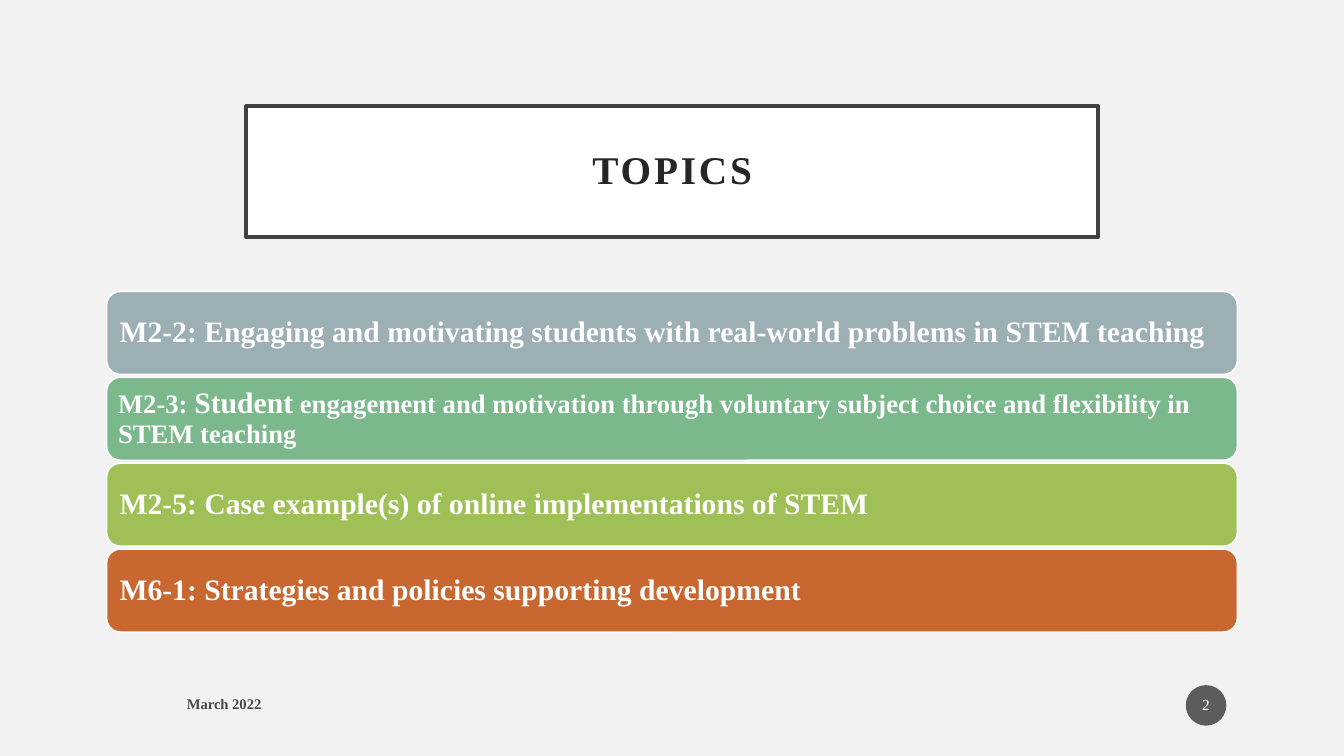
from lxml.etree import SubElement
from pptx import Presentation
from pptx.dml.color import RGBColor
from pptx.enum.shapes import MSO_SHAPE
from pptx.enum.text import MSO_ANCHOR, MSO_AUTO_SIZE, PP_ALIGN
from pptx.oxml.ns import qn
from pptx.util import Pt

TOPICS = [
    ("9BAFB5", 6, [("M2-2: Engaging and motivating students with real-world "
                    "problems in STEM teaching", 20)]),
    ("7BB88C", 5, [("M2-3: ", 18), ("Student", 20),
                   (" engagement and motivation through voluntary subject choice "
                    "and flexibility in STEM teaching", 18)]),
    ("9FC057", 6, [("M2-5: Case example(s) of online implementations of STEM", 20)]),
    ("C96731", 6, [("M6-1: Strategies and policies supporting development", 20)]),
]
BAR_LEFT, BAR_TOP, BAR_WIDTH, BAR_HEIGHT, BAR_STEP = 72, 196.8, 763.2, 56, 58


def set_color(target, color):
    target.rgb = RGBColor.from_string(color)


def set_alpha(element, percent):
    """Make the first solid colour inside the element partly transparent."""
    color = element.find(".//" + qn("a:srgbClr"))
    SubElement(color, qn("a:alpha")).set("val", str(percent * 1000))


def apply_format(target, values):
    for name, value in values.items():
        setattr(target, name, value)


class TopicSlide:
    font_name = "Times New Roman"

    def __init__(self, presentation):
        self.slide = presentation.slides.add_slide(presentation.slide_layouts[5])
        background = self.slide.background.fill
        background.solid()
        set_color(background.fore_color, "F2F2F2")

    def style_shape(self, shape, fill, line=None, line_width=0):
        shape.shadow.inherit = False
        shape.fill.solid()
        set_color(shape.fill.fore_color, fill)
        if line:
            set_color(shape.line.color, line)
            shape.line.width = Pt(line_width)
        else:
            shape.line.fill.background()

    def add_text(self, shape, runs, color, margins, align=PP_ALIGN.LEFT,
                 line_spacing=0.9, bold=True):
        """Fill the shape with one paragraph made of (text, size) runs."""
        horizontal, vertical = margins
        frame = shape.text_frame
        apply_format(frame, {
            "word_wrap": True,
            "auto_size": MSO_AUTO_SIZE.NONE,
            "vertical_anchor": MSO_ANCHOR.MIDDLE,
            "margin_left": Pt(horizontal),
            "margin_right": Pt(horizontal),
            "margin_top": Pt(vertical),
            "margin_bottom": Pt(vertical),
        })
        paragraph = frame.paragraphs[0]
        apply_format(paragraph, {"alignment": align, "line_spacing": line_spacing})
        for text, size in runs:
            run = paragraph.add_run()
            run.text = text
            apply_format(run.font, {"name": self.font_name, "size": Pt(size),
                                    "bold": bold})
            set_color(run.font.color, color)
        return paragraph

    def title(self, text):
        title = self.slide.shapes.title
        apply_format(title, {"left": Pt(166.2), "top": Pt(71.6),
                             "width": Pt(575.2), "height": Pt(88.6)})
        self.style_shape(title, "FFFFFF", "404040", 2.5)
        paragraph = self.add_text(title, [(text, 26.5)], "262626", (14.4, 14.4),
                                  PP_ALIGN.CENTER)
        run_properties = paragraph.runs[0]._r.get_or_add_rPr()
        run_properties.set("spc", "190")

    def topic_bar(self, top, fill, margin, runs):
        bar = self.slide.shapes.add_shape(
            MSO_SHAPE.ROUNDED_RECTANGLE, Pt(BAR_LEFT), Pt(top),
            Pt(BAR_WIDTH), Pt(BAR_HEIGHT))
        self.style_shape(bar, fill, "FFFFFF", 1)
        self.add_text(bar, runs, "FFFFFF", (margin, margin))

    def page_number(self, number):
        circle = self.slide.shapes.add_shape(
            MSO_SHAPE.OVAL, Pt(800.4), Pt(462.6), Pt(27.4), Pt(27.4))
        self.style_shape(circle, "1D1D1D")
        set_alpha(circle._element.spPr, 70)
        self.add_text(circle, [(number, 10.4)], "FFFFFF", (1.4, 3.6),
                      PP_ALIGN.CENTER, bold=False)

    def date(self, text):
        box = self.slide.shapes.add_textbox(Pt(119), Pt(463), Pt(439), Pt(24))
        paragraph = self.add_text(box, [(text, 9.9)], "000000", (7.2, 3.6),
                                  line_spacing=1.0)
        set_alpha(paragraph.runs[0]._r, 70)


def main():
    presentation = Presentation()
    presentation.slide_width = Pt(907.2)
    presentation.slide_height = Pt(510.5)
    topic_slide = TopicSlide(presentation)
    topic_slide.title("TOPICS")
    for index, (fill, margin, runs) in enumerate(TOPICS):
        topic_slide.topic_bar(BAR_TOP + index * BAR_STEP, fill, margin, runs)
    topic_slide.page_number("2")
    topic_slide.date("March 2022")
    presentation.save("out.pptx")


if __name__ == "__main__":
    main()
